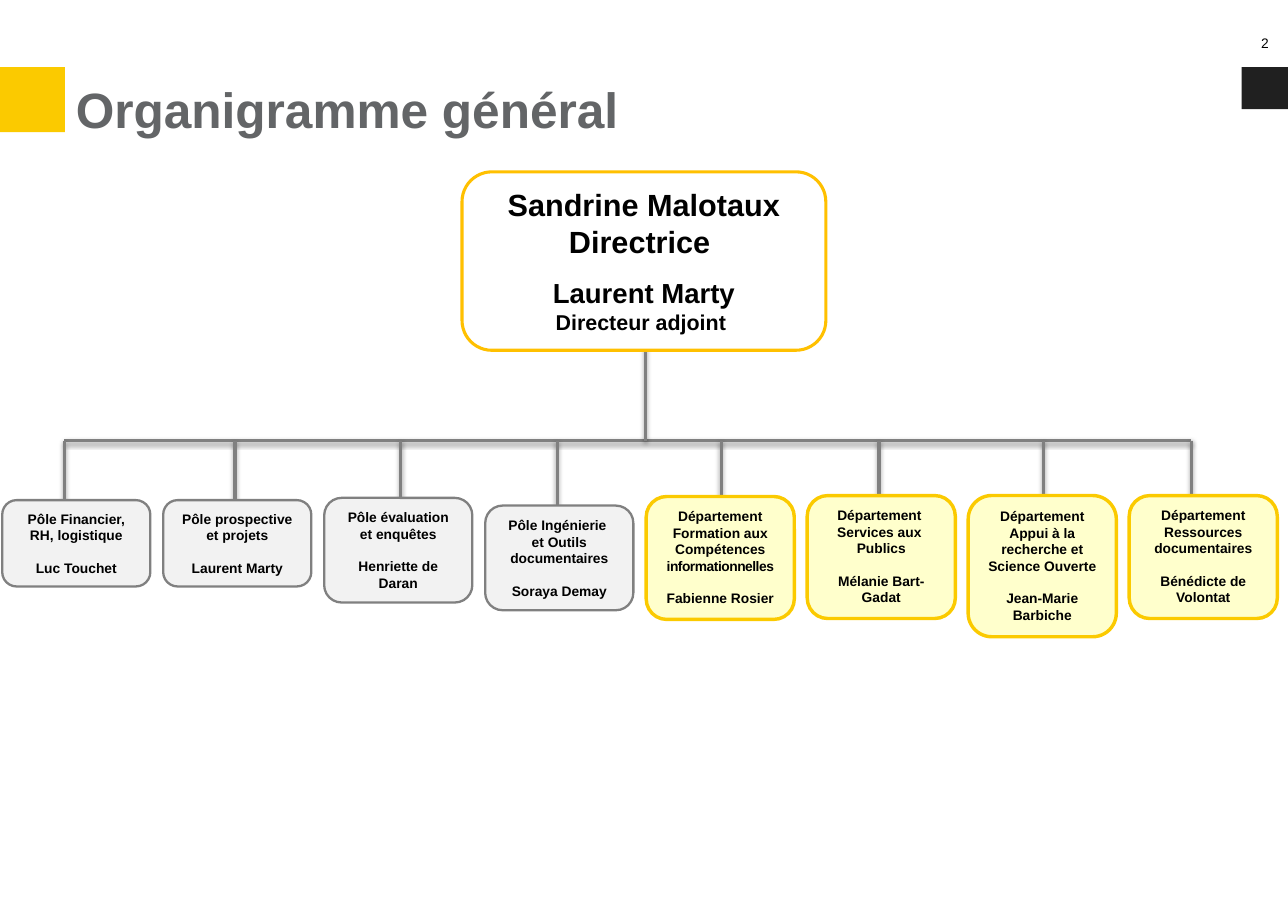
from lxml import etree
from pptx import Presentation
from pptx.dml.color import RGBColor
from pptx.enum.shapes import MSO_CONNECTOR as CONN, MSO_SHAPE as SHAPE
from pptx.enum.text import MSO_ANCHOR as ANCHOR, PP_ALIGN as ALIGN
from pptx.oxml.ns import qn
from pptx.util import Inches, Pt

# Content
TITLE = "Organigramme général"
PAGE = "2"
# paragraph, size, line spacing
DIRECTION = [
    ("Sandrine Malotaux", 20, 1),
    ("Directrice ", 20, 1),
    ("Laurent Marty", 18, 1.5),
    ("Directeur adjoint ", 14, 1),
]
TIGHT = "informationnelles"
# kind, name paragraphs, head, text lines, top (% of height), branch (columns)
UNITS = [
    ("pole", ["Pôle Financier, RH, logistique"], "Luc Touchet", 4, 54.9, 0.4),
    ("pole", ["Pôle prospective et projets"], "Laurent Marty", 4, 54.9, 1.46),
    ("pole", ["Pôle évaluation et enquêtes"], "Henriette de Daran", 5, 54.65, 2.49),
    ("pole", ["Pôle Ingénierie ", "et Outils documentaires"],
     "Soraya Demay", 5, 55.5, 3.46),
    ("dept", ["Département Formation aux Compétences " + TIGHT],
     "Fabienne Rosier", 6, 54.5, 4.48),
    ("dept", ["Département ", "Services aux ", "Publics"],
     "Mélanie Bart-Gadat", 6, 54.4, 5.46),
    ("dept", ["Département Appui à la recherche et Science Ouverte"],
     "Jean-Marie Barbiche", 7, 54.4, 6.48),
    ("dept", ["Département Ressources documentaires"],
     "Bénédicte de Volontat", 6, 54.4, 7.4),
]
COLORS = {
    "text": "000000", "title": "636567", "dark": "202020", "yellow": "FBCA00",
    "amber": "FFC000", "gray": "808080", "light": "F2F2F2", "cream": "FFFFCC",
    "white": "FFFFFF",
}
# fill, line, line width, anchor
STYLES = {
    "pole": ("light", "gray", 1.5, ANCHOR.MIDDLE),
    "dept": ("cream", "yellow", 2.25, ANCHOR.TOP),
    "direction": ("white", "amber", 2, ANCHOR.TOP),
}

# Grid: eight columns, heights in percent
W, H = 11.69, 8.27
COL, ROW = W / len(UNITS), H / 100
BAR, BRANCH_END = 48.37 * ROW, 56.35 * ROW
TRUNK_X, TRUNK_TOP = 4.01 * COL, 34.1 * ROW
HEAD_Y, SQUARE, TAB = 7.38 * ROW, 0.59, 0.42

prs = Presentation()
prs.slide_width, prs.slide_height = Inches(W), Inches(H)
slide = prs.slides.add_slide(prs.slide_layouts[6])


def rgb(name):
    return RGBColor.from_string(COLORS[name])


def add_box(shape, x, y, w, h, fill):
    sp = slide.shapes.add_shape(shape, *map(Inches, (x, y, w, h)))
    sp.shadow.inherit = False
    sp.fill.solid()
    sp.fill.fore_color.rgb = rgb(fill)
    sp.line.fill.background()
    return sp


def add_card(style, x, y, w, h):
    fill, line, width, anchor = STYLES[style]
    sp = add_box(SHAPE.ROUNDED_RECTANGLE, x, y, w, h, fill)
    sp.adjustments[0] = 0.167
    sp.line.color.rgb = rgb(line)
    sp.line.width = Pt(width)
    sp.text_frame.word_wrap = True
    sp.text_frame.vertical_anchor = anchor
    return sp.text_frame


def add_paragraph(tf, first, align=ALIGN.CENTER):
    p = tf.paragraphs[0] if first else tf.add_paragraph()
    p.alignment = align
    return p


def add_run(p, text, size, bold=True, color="text"):
    r = p.add_run()
    r.text = text
    r.font.name, r.font.size, r.font.bold = "Arial", Pt(size), bold
    r.font.color.rgb = rgb(color)
    return r


def add_label(x, y, w, h, anchor, inset):
    tf = slide.shapes.add_textbox(*map(Inches, (x, y, w, h))).text_frame
    tf.word_wrap = True
    tf.vertical_anchor = anchor
    tf.margin_top = tf.margin_bottom = Inches(inset)
    return tf


def add_link(x1, y1, x2, y2):
    line = slide.shapes.add_connector(CONN.STRAIGHT, *map(Inches, (x1, y1, x2, y2)))
    line.line.color.rgb = rgb("gray")
    line.line.width = Pt(2)
    effects = etree.SubElement(line._element.spPr, qn("a:effectLst"))
    shadow = etree.SubElement(effects, qn("a:outerShdw"), blurRad=str(Pt(3.1)),
                              dist=str(Pt(1.6)), dir="5400000", rotWithShape="0")
    black = etree.SubElement(shadow, qn("a:srgbClr"), val=COLORS["text"])
    etree.SubElement(black, qn("a:alpha"), val="38000")


# Header
add_box(SHAPE.RECTANGLE, W - TAB, HEAD_Y, TAB, 0.38, "dark")
add_box(SHAPE.RECTANGLE, 0, HEAD_Y, SQUARE, SQUARE, "yellow")
tf = add_label(W - TAB, 0.17, TAB, 0.44, ANCHOR.MIDDLE, 0.06)
add_run(add_paragraph(tf, True), PAGE, 9, bold=False)
tf = add_label(SQUARE, HEAD_Y, W - SQUARE, 0.61, ANCHOR.TOP, 0.11)
add_run(add_paragraph(tf, True, ALIGN.LEFT), TITLE, 32.4, color="title")

# Links, behind the cards
branches = [unit[-1] * COL for unit in UNITS]
add_link(branches[0], BAR, branches[-1], BAR)
add_link(TRUNK_X, TRUNK_TOP, TRUNK_X, BAR)
for x in branches:
    add_link(x, BAR, x, BRANCH_END)

# Direction
tf = add_card("direction", 2.87 * COL, 18.86 * ROW, 2.26 * COL, 19.59 * ROW)
for i, (text, size, spacing) in enumerate(DIRECTION):
    p = add_paragraph(tf, i == 0)
    p.line_spacing = spacing
    add_run(p, text, size)

# Units: card height follows the number of text lines
for col, (kind, names, head, lines, top, _) in enumerate(UNITS):
    tf = add_card(kind, col * COL + 0.02, top * ROW, 0.92 * COL, 0.12 + 0.166 * lines)
    for i, name in enumerate(names):
        p = add_paragraph(tf, i == 0)
        start, tight, _ = name.partition(TIGHT)
        add_run(p, start, 9)
        if tight:
            add_run(p, tight, 9).font._element.set("spc", "-30")
    p = add_paragraph(tf, False)
    p.space_before = Pt(10.4)
    add_run(p, head, 9)

prs.save("out.pptx")
